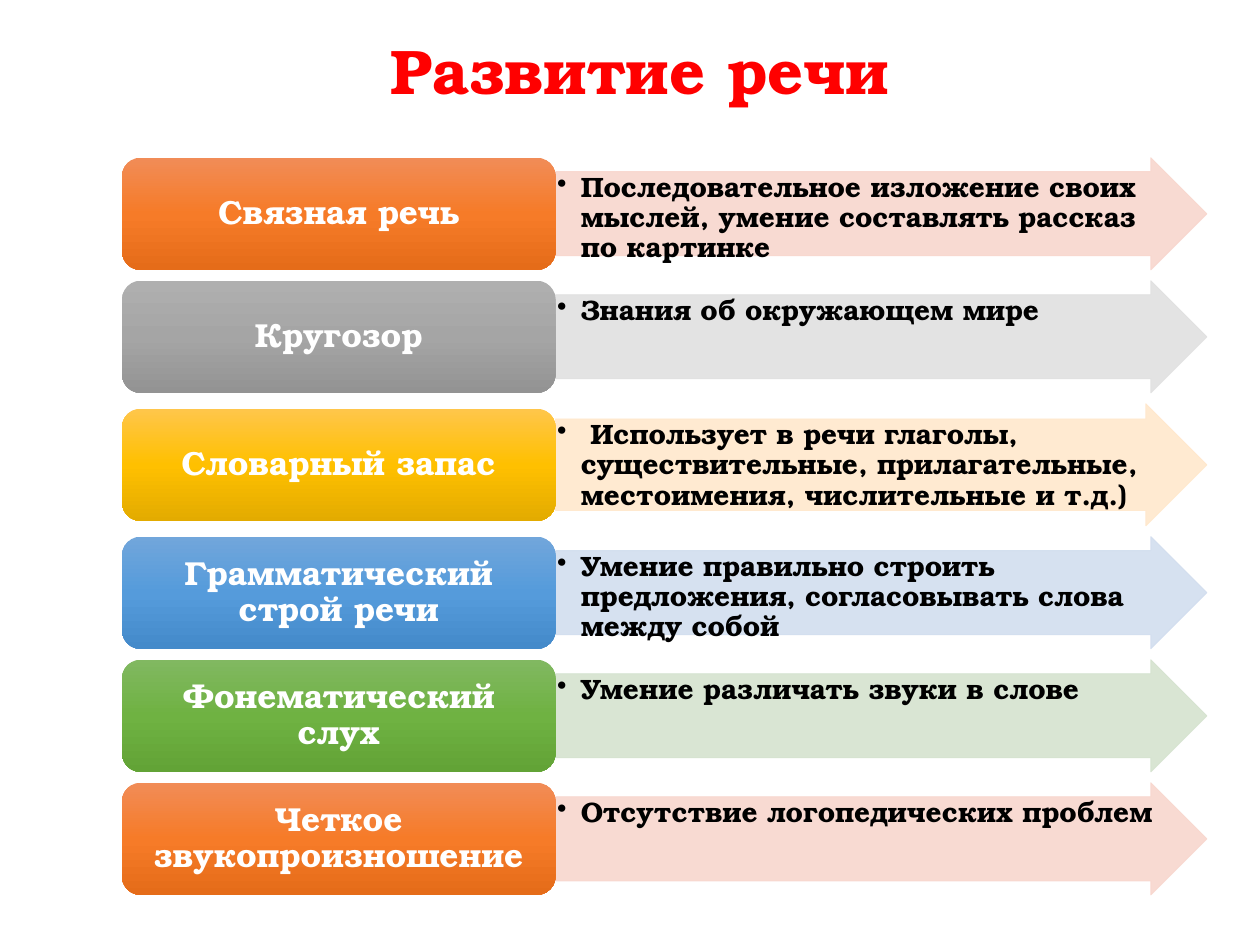
from lxml.etree import SubElement
from pptx import Presentation
from pptx.dml.color import RGBColor
from pptx.enum.shapes import MSO_SHAPE
from pptx.enum.text import MSO_ANCHOR, PP_ALIGN
from pptx.oxml import parse_xml
from pptx.oxml.ns import nsdecls, qn
from pptx.util import Cm, Pt

# Content: label, description, gradient of the label, arrow colour
TITLE = "Развитие речи"
ORANGE = ("F18C57", "F67B28", "E56C19")
ROWS = [
    ("Связная речь",
     "Последовательное изложение своих мыслей, умение составлять рассказ по картинке",
     ORANGE, "F8D7CE"),
    ("Кругозор", "Знания об окружающем мире",
     ("AFAFAF", "A5A5A5", "939393"), "E1E1E1"),
    ("Словарный запас",
     " Использует в речи глаголы, существительные, прилагательные, "
     "местоимения, числительные и т.д.)",
     ("FFC64B", "FFC000", "E3AB00"), "FFE8CC"),
    ("Грамматический строй речи",
     "Умение правильно строить предложения, согласовывать слова между собой",
     ("71A6DB", "559BDB", "448ACA"), "D2DEEF"),
    ("Фонематический слух", "Умение различать звуки в слове",
     ("81B861", "6FB242", "62A336"), "D5E3CF"),
    ("Четкое звукопроизношение", "Отсутствие логопедических проблем",
     ORANGE, "F8D7CE"),
]

# Layout in centimetres
FONT = "TeX Gyre Bonum"
LEFT, TOP, GAP = 2.46, 3.18, 0.22
LABEL_W, ROW_H = 8.74, 2.26
ARROW_W = 13.13
TALL_ROW, TALL_H = 2, 2.46


def rgb(value):
    return RGBColor.from_string(value)


def style(p, size, color, align):
    p.font.name, p.font.size, p.font.bold = FONT, Pt(size), True
    p.font.color.rgb = rgb(color)
    p.alignment = align


def add_box(kind, x, y, w, h, text, margins, anchor):
    sp = s.shapes.add_shape(kind, Cm(x), Cm(y), Cm(w), Cm(h))
    sp.shadow.inherit = False
    tf = sp.text_frame
    tf.word_wrap, tf.vertical_anchor = True, anchor
    tf.margin_left = tf.margin_right = Cm(margins[0])
    tf.margin_top = tf.margin_bottom = Cm(margins[1])
    p = tf.paragraphs[0]
    p.text, p.line_spacing = text, 0.9
    return sp, p


def fill_gradient(sp, colors):
    stops = "".join(
        f'<a:gs pos="{i * 50000}"><a:srgbClr val="{c}"/></a:gs>'
        for i, c in enumerate(colors))
    sp._element.spPr.find(qn("a:prstGeom")).addnext(parse_xml(
        f'<a:gradFill {nsdecls("a")} rotWithShape="1"><a:gsLst>{stops}</a:gsLst>'
        '<a:lin ang="5400000" scaled="0"/></a:gradFill>'))


def add_arrow(y, h, text, color):
    sp, p = add_box(MSO_SHAPE.RIGHT_ARROW, LEFT + LABEL_W, y, ARROW_W, h,
                    text, (0.03, 0.03), MSO_ANCHOR.TOP)
    sp.adjustments[0], sp.adjustments[1] = 0.75, 0.5
    sp.fill.solid()
    sp.fill.fore_color.rgb = sp.line.color.rgb = rgb(color)
    sp.line.width = Pt(0.5)
    for clr in sp._element.spPr.iter(qn("a:srgbClr")):
        SubElement(clr, qn("a:alpha"), val="90000")
    style(p, 16, "000000", PP_ALIGN.LEFT)
    # Bullet with a hanging indent
    pPr = p._p.get_or_add_pPr()
    pPr.set("marL", str(Cm(0.48)))
    pPr.set("indent", str(-Cm(0.48)))
    bullet = parse_xml(f'<a:buChar {nsdecls("a")} char="•"/>')
    pPr.insert_element_before(bullet, "a:tabLst", "a:defRPr", "a:extLst")


def add_label(y, text, colors):
    sp, p = add_box(MSO_SHAPE.ROUNDED_RECTANGLE, LEFT, y, LABEL_W, ROW_H,
                    text, (0.2, 0.1), MSO_ANCHOR.MIDDLE)
    fill_gradient(sp, colors)
    sp.line.fill.background()
    style(p, 19, "FFFFFF", PP_ALIGN.CENTER)


prs = Presentation()
prs.slide_width, prs.slide_height = Cm(25.4), Cm(19.05)
s = prs.slides.add_slide(prs.slide_layouts[5])

# Title
title = s.shapes.title
title.left, title.top, title.width, title.height = Cm(4.9), Cm(0.5), Cm(16), Cm(1.8)
title.text_frame.text = TITLE
title.text_frame.vertical_anchor = MSO_ANCHOR.MIDDLE
style(title.text_frame.paragraphs[0], 36, "FF0000", PP_ALIGN.CENTER)

# Rows: arrows stacked with equal gaps, each label centred on its arrow
y = TOP
for i, (label, description, gradient, tint) in enumerate(ROWS):
    h = TALL_H if i == TALL_ROW else ROW_H
    add_arrow(y, h, description, tint)
    add_label(y + (h - ROW_H) / 2, label, gradient)
    y += h + GAP

prs.save("out.pptx")
